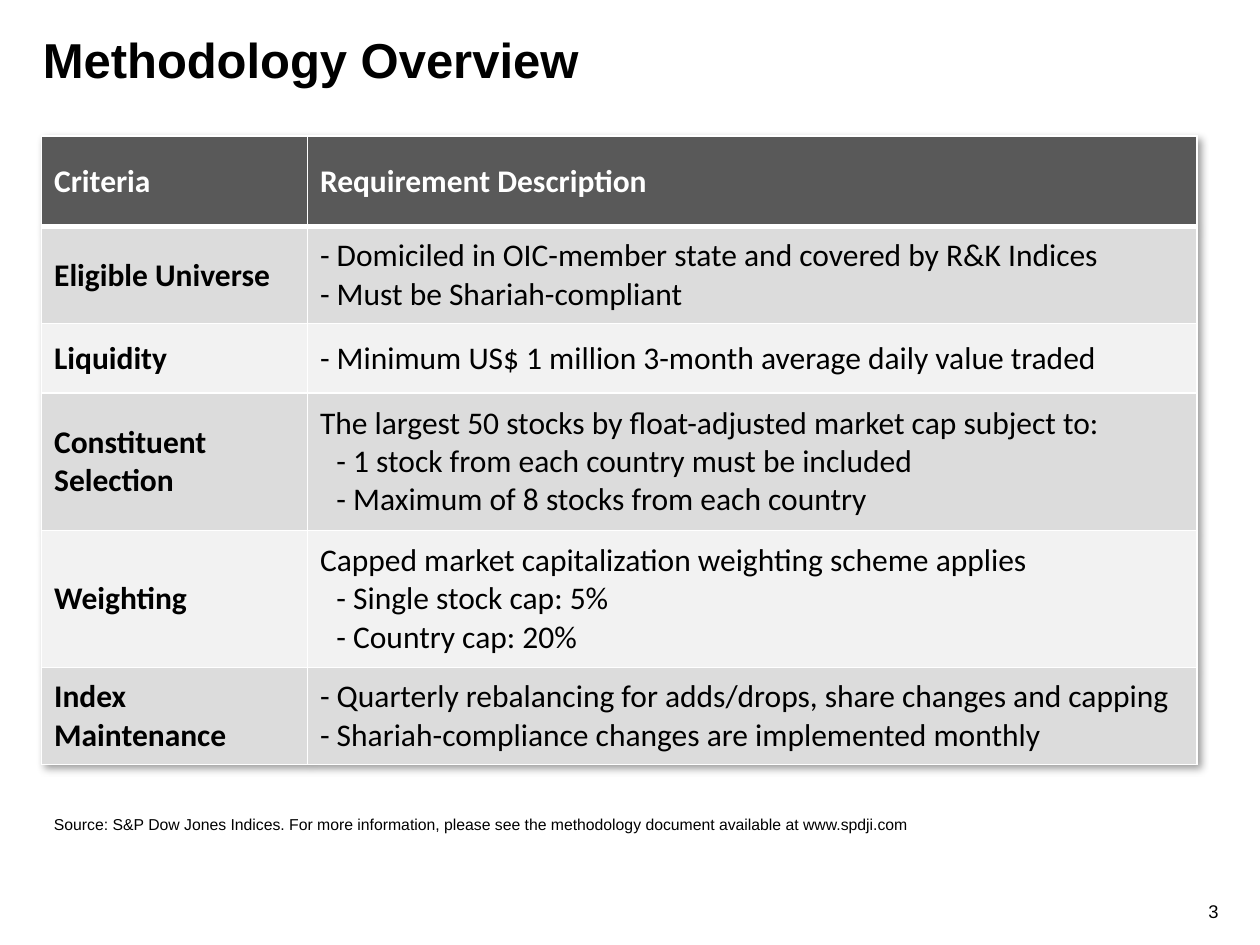
import dataclasses

import lxml.etree
import pptx
import pptx.dml.color
import pptx.enum.text
import pptx.oxml.ns
import pptx.util

Inches = pptx.util.Inches
Pt = pptx.util.Pt
Anchor = pptx.enum.text.MSO_ANCHOR
Align = pptx.enum.text.PP_ALIGN


@dataclasses.dataclass(frozen=True)
class Theme:
    heading_font: str = "Arial"
    table_font: str = "Calibri"
    ink: str = "000000"
    paper: str = "FFFFFF"
    header: str = "595959"
    bands: tuple = ("DCDCDC", "F2F2F2")
    title_size: float = 28
    table_size: float = 18
    source_size: float = 9
    number_size: float = 10.5
    rule: float = 1
    header_rule: float = 3


class SlideBuilder:
    def __init__(self, slide, theme):
        self.slide = slide
        self.theme = theme

    def style(self, paragraph, font, size, color, bold=False):
        for run in paragraph.runs:
            run.font.name = font
            run.font.size = Pt(size)
            run.font.bold = bold
            run.font.color.rgb = pptx.dml.color.RGBColor.from_string(color)

    def text(self, words, box, size, bold=False, align=Align.LEFT,
             anchor=Anchor.TOP, insets=(0.1, 0.05, 0.1, 0.05), spacing=1.0):
        frame = self.slide.shapes.add_textbox(*map(Inches, box)).text_frame
        frame.word_wrap = True
        frame.vertical_anchor = anchor
        (frame.margin_left, frame.margin_top,
         frame.margin_right, frame.margin_bottom) = map(Inches, insets)
        frame.text = words
        paragraph = frame.paragraphs[0]
        paragraph.alignment = align
        paragraph.line_spacing = spacing
        self.style(paragraph, self.theme.heading_font, size, self.theme.ink, bold)

    def child(self, parent, tag, **attributes):
        element = lxml.etree.SubElement(parent, pptx.oxml.ns.qn(tag))
        for name, value in attributes.items():
            element.set(name, str(value))
        return element

    def borders(self, cell, top, bottom):
        properties = cell._tc.get_or_add_tcPr()
        rule = self.theme.rule
        for side, width in (("L", rule), ("R", rule), ("T", top), ("B", bottom)):
            line = self.child(properties, f"a:ln{side}", w=Pt(width))
            self.child(self.child(line, "a:solidFill"), "a:srgbClr", val=self.theme.paper)

    def cell(self, cell, lines, fill, color, bold, top, bottom, indent):
        self.borders(cell, top, bottom)
        cell.fill.solid()
        cell.fill.fore_color.rgb = pptx.dml.color.RGBColor.from_string(fill)
        cell.vertical_anchor = Anchor.MIDDLE
        cell.text_frame.text = "\n".join(lines)
        for position, paragraph in enumerate(cell.text_frame.paragraphs):
            if indent and position:
                margin, hanging = indent
                properties = paragraph._p.get_or_add_pPr()
                properties.set("marL", str(Inches(margin)))
                properties.set("indent", str(Inches(hanging)))
            self.style(paragraph, self.theme.table_font, self.theme.table_size, color, bold)

    def table_shadow(self, table):
        effects = self.child(table._tbl.tblPr, "a:effectLst")
        table._tbl.tblPr.insert(0, effects)
        shadow = self.child(effects, "a:outerShdw", blurRad=Pt(4), dist=Pt(3),
                            dir=2700000, algn="tl", rotWithShape=0)
        self.child(self.child(shadow, "a:srgbClr", val=self.theme.ink), "a:alpha", val=40000)

    def table(self, rows, box, widths, heights):
        theme = self.theme
        table = self.slide.shapes.add_table(len(rows), len(widths), *map(Inches, box)).table
        table.horz_banding = False
        for column, width in zip(table.columns, widths):
            column.width = Inches(width)
        for index, (criterion, requirement, indent) in enumerate(rows):
            table.rows[index].height = Inches(heights[index])
            is_header = index == 0
            fill = theme.header if is_header else theme.bands[(index - 1) % 2]
            color = theme.paper if is_header else theme.ink
            top = theme.header_rule if index == 1 else theme.rule
            bottom = theme.header_rule if is_header else theme.rule
            self.cell(table.cell(index, 0), [criterion], fill, color, True, top, bottom, None)
            self.cell(table.cell(index, 1), requirement, fill, color, is_header,
                      top, bottom, indent)
        self.table_shadow(table)


CRITERIA = [
    ("Criteria", ["Requirement Description"], None),
    ("Eligible Universe",
     ["- Domiciled in OIC-member state and covered by R&K Indices",
      "- Must be Shariah-compliant"], None),
    ("Liquidity", ["- Minimum US$ 1 million 3-month average daily value traded"], None),
    ("Constituent Selection",
     ["The largest 50 stocks by float-adjusted market cap subject to:",
      "- 1 stock from each country must be included",
      "- Maximum of 8 stocks from each country"], (0.19, -0.06)),
    ("Weighting",
     ["Capped market capitalization weighting scheme applies",
      "- Single stock cap: 5%",
      "- Country cap: 20%"], (0.25, -0.12)),
    ("Index Maintenance",
     ["- Quarterly rebalancing for adds/drops, share changes and capping",
      "- Shariah-compliance changes are implemented monthly"], None),
]


def main():
    """Build the methodology overview slide."""
    presentation = pptx.Presentation()
    presentation.slide_width = Inches(10)
    presentation.slide_height = Inches(7.5)
    theme = Theme()
    builder = SlideBuilder(presentation.slides.add_slide(presentation.slide_layouts[6]), theme)
    builder.text("3", (9.2, 6.91, 0.47, 0.41), theme.number_size, align=Align.RIGHT,
                 anchor=Anchor.BOTTOM, insets=(0.1, 0, 0, 0))
    builder.text("Methodology Overview", (0.34, 0.24, 9.32, 0.95), theme.title_size,
                 bold=True, insets=(0, 0.05, 0.1, 0.05), spacing=0.9)
    builder.text("Source: S&P Dow Jones Indices. For more information, please see the "
                 "methodology document available at www.spdji.com",
                 (0.33, 6.42, 8.88, 0.21), theme.source_size)
    builder.table(CRITERIA, (0.33, 1.08, 9.17, 5), (2.11, 7.06),
                  (0.72, 0.77, 0.55, 1.09, 1.09, 0.77))
    presentation.save("out.pptx")


if __name__ == "__main__":
    main()
